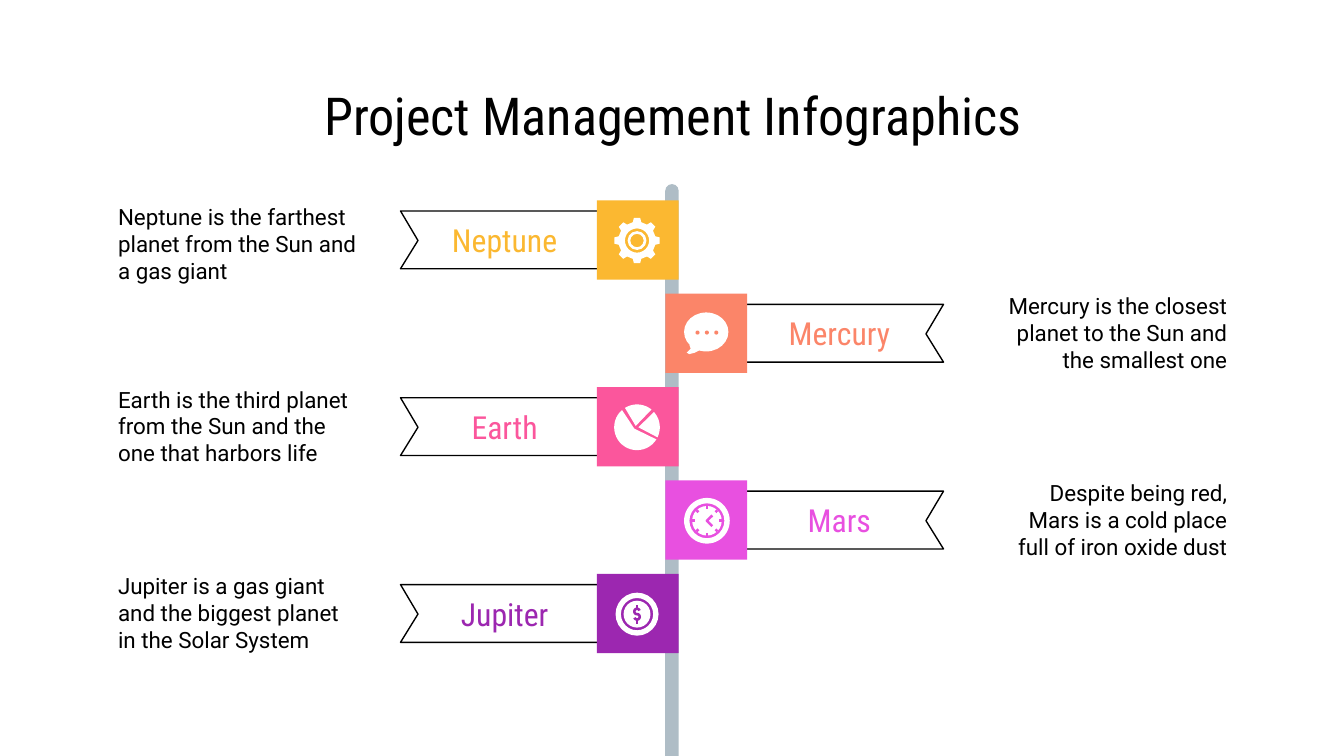
from dataclasses import dataclass
from math import cos, radians, sin

from lxml.etree import SubElement
from pptx import Presentation
from pptx.dml.color import RGBColor as Color
from pptx.enum.shapes import MSO_CONNECTOR as Connector, MSO_SHAPE as Shape
from pptx.enum.text import MSO_ANCHOR as Anchor, PP_ALIGN as Align
from pptx.oxml.ns import qn
from pptx.util import Inches, Pt


@dataclass(frozen=True)
class Theme:
    ink: str = "000000"
    white: str = "FFFFFF"
    pole: str = "AFBDC6"
    amber: str = "FBB831"
    coral: str = "FB8569"
    pink: str = "FB569C"
    magenta: str = "E850E0"
    purple: str = "9C27B0"
    heading_font: str = "Roboto Condensed"
    body_font: str = "Roboto"
    title_size: float = 28
    label_size: float = 17
    body_size: float = 12
    outline: float = 0.75
    icon_stroke: float = 1.4


def write(box, text, font, size, color, align=Align.CENTER):
    frame = box.text_frame
    frame.word_wrap = True
    frame.vertical_anchor = Anchor.MIDDLE
    frame.margin_left = frame.margin_right = Inches(0.1)
    frame.margin_top = frame.margin_bottom = Inches(0.1)
    para = frame.paragraphs[0]
    para.alignment = align
    for number, line in enumerate(text.split("\n")):
        if number:
            para.add_line_break()
        span = para.add_run()
        span.text = line
        span.font.name = font
        span.font.size = Pt(size)
        span.font.color.rgb = Color.from_string(color)


def arc(x, y, radius, start, end, steps=24):
    angles = [radians(start + (end - start) * step / steps) for step in range(steps + 1)]
    return [(x + radius * cos(angle), y + radius * sin(angle)) for angle in angles]


class Painter:
    def __init__(self, page, theme):
        self.page = page
        self.theme = theme

    def paint(self, shape, fill=None, line=None, width=0.75):
        shape.shadow.inherit = False
        if fill:
            shape.fill.solid()
            shape.fill.fore_color.rgb = Color.from_string(fill)
        else:
            shape.fill.background()
        if line:
            shape.line.color.rgb = Color.from_string(line)
            shape.line.width = Pt(width)
        else:
            shape.line.fill.background()
        return shape

    def text(self, left, top, width, height, text, **style):
        box = self.page.shapes.add_textbox(Inches(left), Inches(top), Inches(width), Inches(height))
        write(box, text, **style)

    def preset(self, kind, left, top, width, height, fill):
        shape = self.page.shapes.add_shape(kind, Inches(left), Inches(top), Inches(width), Inches(height))
        return self.paint(shape, fill)

    def disc(self, x, y, radius, fill):
        return self.preset(Shape.OVAL, x - radius, y - radius, 2 * radius, 2 * radius, fill)

    def ring(self, x, y, radius, hole, fill):
        ring = self.preset(Shape.DONUT, x - radius, y - radius, 2 * radius, 2 * radius, fill)
        ring.adjustments[0] = (radius - hole) / (2 * radius)

    def outline(self, *contours, closed=True, **paint):
        contours = [[(Inches(x), Inches(y)) for x, y in contour] for contour in contours]
        builder = self.page.shapes.build_freeform(*contours[0][0], scale=1.0)
        for number, contour in enumerate(contours):
            if number:
                builder.move_to(*contour[0])
            builder.add_line_segments(contour[1:], close=closed)
        return self.paint(builder.convert_to_shape(), **paint)

    def stroke(self, start, end, color):
        ends = [Inches(value) for value in (*start, *end)]
        line = self.page.shapes.add_connector(Connector.STRAIGHT, *ends)
        line.line.color.rgb = Color.from_string(color)
        line.line.width = Pt(self.theme.icon_stroke)
        SubElement(line._element.spPr, qn("a:effectLst"))

    def gear(self, x, y, color):
        white = self.theme.white
        teeth = []
        for middle in range(0, 360, 45):
            for offset, radius in ((-13, 0.14), (-8, 0.17), (8, 0.17), (13, 0.14)):
                teeth += arc(x, y, radius, middle + offset, 0, 1)[:1]
        self.outline(teeth, arc(x, y, 0.09, 0, 360), fill=white)
        self.ring(x, y, 0.07, 0.05, white)

    def speech(self, x, y, color):
        white = self.theme.white
        self.preset(Shape.OVAL, x - 0.17, y - 0.16, 0.33, 0.29, white)
        tail = [(-0.13, 0.08), (-0.12, 0.11), (-0.15, 0.14), (-0.13, 0.15), (-0.09, 0.14), (-0.05, 0.12)]
        self.outline([(x + dx, y + dy) for dx, dy in tail], fill=white)
        for dx in (-0.07, 0, 0.07):
            self.disc(x + dx, y - 0.01, 0.03 / 2, color)

    def pie(self, x, y, color):
        slices = [(-0.02, 0.01, 32, 229), (-0.01, -0.01, 238, 309), (0.01, 0, 318, 386)]
        for dx, dy, start, end in slices:
            rim = arc(x, y, 0.17, start, end)
            self.outline([(x + dx, y + dy), *rim], fill=self.theme.white)

    def clock(self, x, y, color):
        self.ring(x, y, 0.17, 0.13, self.theme.white)
        self.disc(x, y, 0.11, self.theme.white)
        for angle in range(0, 360, 45):
            inner, outer = [arc(x, y, radius, angle, angle, 1)[0] for radius in (0.09, 0.11)]
            self.stroke(inner, outer, color)
        hand = [(x + 0.04, y - 0.04), (x, y), (x + 0.04, y + 0.04)]
        self.outline(hand, closed=False, line=color, width=self.theme.icon_stroke)

    def coin(self, x, y, color):
        self.ring(x, y, 0.16, 0.12, self.theme.white)
        self.disc(x, y, 0.1, self.theme.white)
        curve = arc(x, y - 0.02, 0.02, -20, -270) + arc(x, y + 0.02, 0.02, 270, 520)
        self.outline(curve, closed=False, line=color, width=self.theme.icon_stroke)
        for side in (-1, 1):
            self.stroke((x, y + side * 0.04), (x, y + side * 0.07), color)

    def ribbon(self, base, tip, top, label, color):
        notch = tip + (0.13 if base > tip else -0.13)
        bottom = top + 0.43
        points = [(base, bottom), (tip, bottom), (notch, top + 0.22), (tip, top), (base, top)]
        ribbon = self.outline(points, line=self.theme.ink, width=self.theme.outline)
        write(ribbon, label, self.theme.heading_font, self.theme.label_size, color)

    def signpost(self, top, text_top, on_left, label, text, color, icon):
        theme = self.theme
        base, tip, block, icon_x, text_left, align = (
            (4.53, 2.98, 4.44, 4.74, 0.78, Align.LEFT) if on_left
            else (5.47, 7.02, 4.95, 5.26, 7.25, Align.RIGHT)
        )
        self.ribbon(base, tip, top + 0.08, label, color)
        self.preset(Shape.RECTANGLE, block, top, 0.61, 0.59, color)
        self.text(text_left, text_top, 1.98, 0.58, text,
                  font=theme.body_font, size=theme.body_size, color=theme.ink, align=align)
        icon(icon_x, top + 0.3, color)


def main():
    deck = Presentation()
    deck.slide_width, deck.slide_height = Inches(10), Inches(10 * 9 / 16)
    page = deck.slides.add_slide(deck.slide_layouts[6])
    theme = Theme()
    painter = Painter(page, theme)

    painter.text(0.78, 0.59, 8.45, 0.53, "Project Management Infographics",
                 font=theme.heading_font, size=theme.title_size, color=theme.ink)
    pole = painter.preset(Shape.ROUND_2_SAME_RECTANGLE, 4.95, 1.37, 0.1, 4.26, theme.pole)
    pole.adjustments[0] = 0.5

    planets = [
        ("Neptune", "Neptune is the farthest planet from the Sun and a gas giant", theme.amber, painter.gear),
        ("Mercury", "Mercury is the closest planet to the Sun and the smallest one", theme.coral, painter.speech),
        ("Earth", "Earth is the third planet from the Sun and the one that harbors life", theme.pink, painter.pie),
        ("Mars", "Despite being red,\nMars is a cold place\nfull of iron oxide dust", theme.magenta, painter.clock),
        ("Jupiter", "Jupiter is a gas giant and the biggest planet in the Solar System", theme.purple, painter.coin),
    ]
    first_top, last_top = 1.49, 4.27
    pitch = (last_top - first_top) / (len(planets) - 1)
    for row, planet in enumerate(planets):
        top = first_top + row * pitch
        text_top = top if row else top + 0.03
        painter.signpost(top, text_top, row % 2 == 0, *planet)

    deck.save("out.pptx")


if __name__ == "__main__":
    main()
